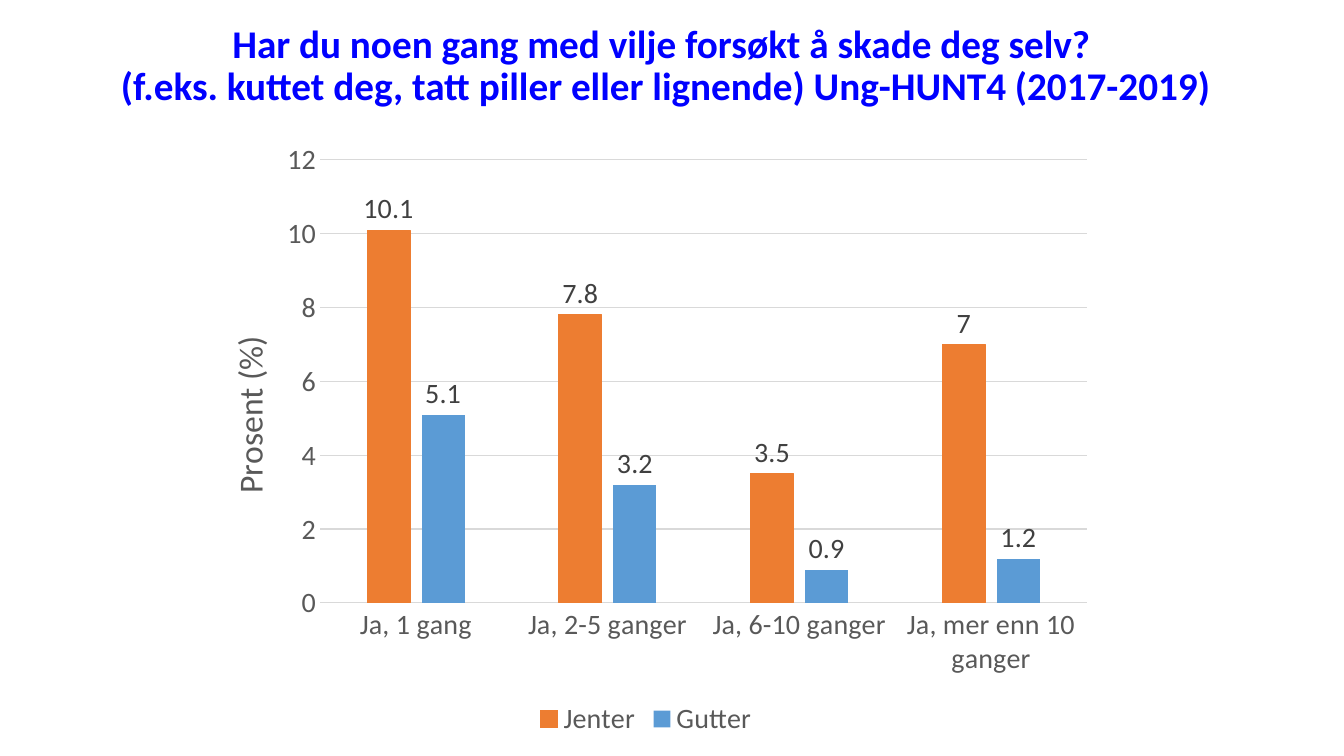
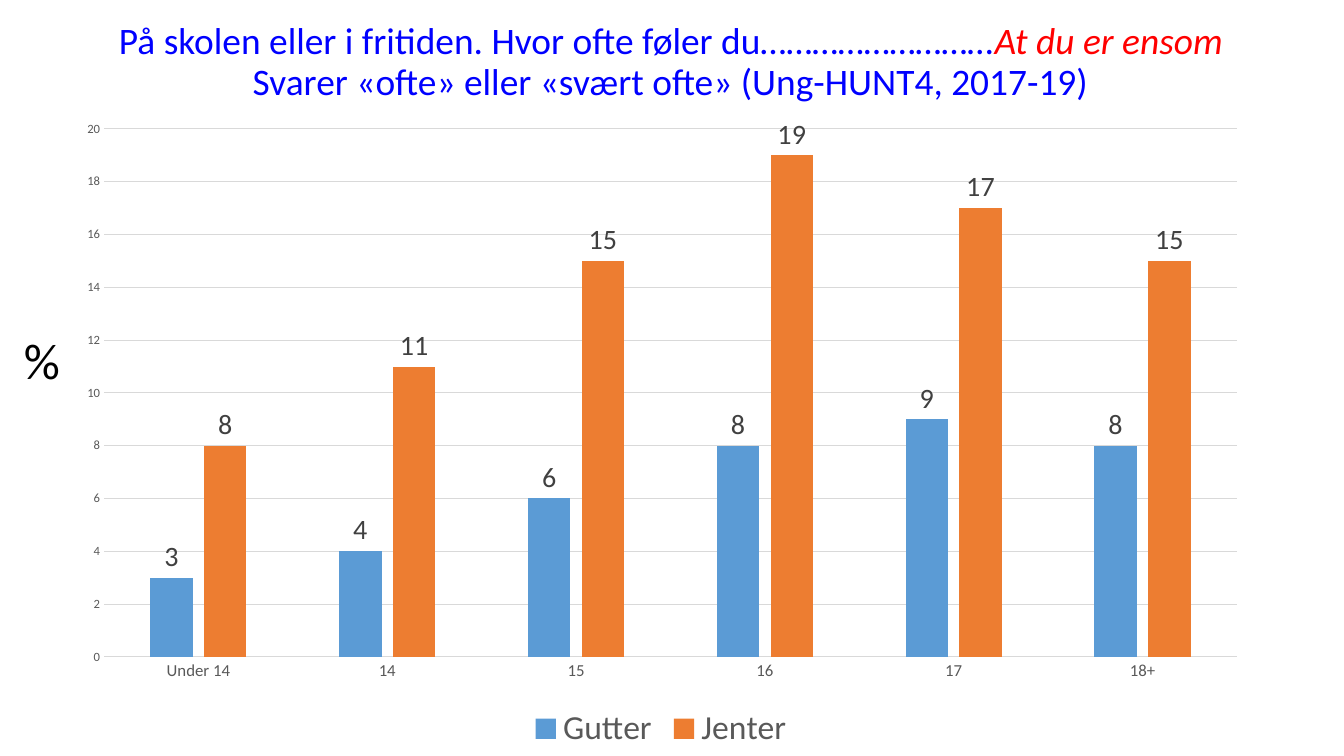
from dataclasses import dataclass

from lxml.etree import SubElement
from pptx import Presentation
from pptx.chart.data import CategoryChartData
from pptx.dml.color import RGBColor
from pptx.enum.chart import XL_CHART_TYPE, XL_LABEL_POSITION, XL_LEGEND_POSITION, XL_TICK_MARK
from pptx.enum.text import MSO_ANCHOR, MSO_AUTO_SIZE, PP_ALIGN
from pptx.oxml.ns import qn
from pptx.util import Pt

SCALE = 12192000 / 1344


@dataclass(frozen=True)
class Theme:
    font: str = "Calibri"
    title: str = "0000FF"
    accent: str = "FF0000"
    text: str = "000000"
    axis: str = "595959"
    label: str = "404040"
    grid: str = "D9D9D9"
    girls: str = "ED7D31"
    boys: str = "5B9BD5"
    label_size: int = 20
    axis_title_size: int = 24
    unit_size: int = 36


THEME = Theme()
SERIES_COLORS = {"Jenter": THEME.girls, "Gutter": THEME.boys}


def px(value):
    return round(value * SCALE)


def apply(target, **formats):
    for name, value in formats.items():
        setattr(target, name, value)


def style_font(font, size, color, bold=False, italic=False):
    apply(font, name=THEME.font, size=Pt(size), bold=bold, italic=italic)
    font.color.rgb = RGBColor.from_string(color)


def style_line(line, color):
    line.color.rgb = RGBColor.from_string(color)
    line.width = Pt(0.75)


def place(shape, box):
    apply(shape, **dict(zip(("left", "top", "width", "height"), map(px, box))))


def add_title(page, box, size, lines, bold=False):
    title = page.shapes.title
    place(title, box)
    frame = title.text_frame
    apply(frame, word_wrap=True, auto_size=MSO_AUTO_SIZE.NONE, vertical_anchor=MSO_ANCHOR.MIDDLE)
    para = frame.paragraphs[0]
    apply(para, alignment=PP_ALIGN.CENTER, line_spacing=0.9)
    for index, line in enumerate(lines):
        if index:
            para.add_line_break()
        for text, color, italic in line:
            span = para.add_run()
            span.text = text
            style_font(span.font, size, color, bold, italic)


def add_layout(parent, chart_box, box, inner=False):
    left, top, width, height = chart_box
    layout = parent.get_or_add_layout() if hasattr(parent, "get_or_add_layout") else parent.find(qn("c:layout"))
    if layout is None:
        layout = SubElement(parent, qn("c:layout"))
        parent.remove(layout)
        parent.insert(0, layout)
    for child in list(layout):
        layout.remove(child)
    manual = SubElement(layout, qn("c:manualLayout"))
    settings = [("layoutTarget", "inner")] if inner else []
    settings += [("xMode", "edge"), ("yMode", "edge")]
    fractions = ((box[0] - left) / width, (box[1] - top) / height)
    fractions += tuple(part / whole for part, whole in zip(box[2:], (width, height)))
    settings += [(key, f"{value:.4f}") for key, value in zip("xywh", fractions)]
    for key, value in settings:
        SubElement(manual, qn(f"c:{key}")).set("val", value)


def style_axes(chart, maximum, category_size, value_size):
    category, value = chart.category_axis, chart.value_axis
    for axis, size in ((category, category_size), (value, value_size)):
        apply(axis, major_tick_mark=XL_TICK_MARK.NONE, minor_tick_mark=XL_TICK_MARK.NONE)
        style_font(axis.tick_labels.font, size, THEME.axis)
    style_line(category.format.line, THEME.grid)
    apply(value, minimum_scale=0, maximum_scale=maximum, major_unit=2, has_major_gridlines=True)
    value.format.line.fill.background()
    style_line(value.major_gridlines.format.line, THEME.grid)


def style_series(plot, number_format):
    for series in plot.series:
        color = SERIES_COLORS[series.name]
        series.format.fill.solid()
        series.format.fill.fore_color.rgb = RGBColor.from_string(color)
        series.invert_if_negative = False
        labels = series.data_labels
        apply(labels, show_value=True, position=XL_LABEL_POSITION.OUTSIDE_END,
              number_format=number_format, number_format_is_linked=False)
        style_font(labels.font, THEME.label_size, THEME.label)


def add_columns(page, box, plot_box, categories, values, maximum, sizes, number_format="General"):
    data = CategoryChartData()
    data.categories = categories
    for name, numbers in values.items():
        data.add_series(name, numbers)
    frame = page.shapes.add_chart(XL_CHART_TYPE.COLUMN_CLUSTERED, *map(px, box), data)
    chart = frame.chart
    style_font(chart.font, 10, THEME.text)
    apply(chart, has_title=False, has_legend=True)
    apply(chart.legend, position=XL_LEGEND_POSITION.BOTTOM, include_in_layout=False)
    style_font(chart.legend.font, sizes["legend"], THEME.axis)
    plot = chart.plots[0]
    apply(plot, gap_width=219, overlap=-27, vary_by_categories=False)
    style_axes(chart, maximum, sizes["category"], sizes["value"])
    style_series(plot, number_format)
    add_layout(chart._chartSpace.chart.plotArea, box, plot_box, inner=True)
    return chart


def add_axis_title(chart, chart_box, corner, text):
    title = chart.value_axis.axis_title
    para = title.text_frame.paragraphs[0]
    span = para.add_run()
    span.text = text
    style_font(span.font, THEME.axis_title_size, THEME.axis)
    add_layout(title._element, chart_box, corner)


def add_unit(page, box, text):
    unit = page.shapes.add_textbox(*map(px, box))
    frame = unit.text_frame
    apply(frame, word_wrap=False, auto_size=MSO_AUTO_SIZE.SHAPE_TO_FIT_TEXT)
    span = frame.paragraphs[0].add_run()
    span.text = text
    style_font(span.font, THEME.unit_size, THEME.text)


def build_self_harm(page):
    box = (188, 131, 916, 611)
    chart = add_columns(
        page, box, (320, 160, 767, 443),
        ("Ja, 1 gang", "Ja, 2-5 ganger", "Ja, 6-10 ganger", "Ja, mer enn 10 ganger"),
        {"Jenter": (10.1, 7.8, 3.5, 7), "Gutter": (5.1, 3.2, 0.9, 1.2)},
        12, {"category": 20, "value": 20, "legend": 20})
    style_line(chart.plots[0].series[0].format.line, THEME.girls)
    add_axis_title(chart, box, (221, 330), "Prosent (%)")
    add_title(page, (86, -6, 1159, 146), 28, (
        [("Har du noen gang med vilje forsøkt å skade deg selv? ", THEME.title, False)],
        [("(f.eks. kuttet deg, tatt piller eller lignende) Ung-HUNT4 (2017-2019)", THEME.title, False)],
    ), bold=True)


def build_loneliness(page):
    add_title(page, (62, 0, 1218, 126), 26.7, (
        [("På skolen eller i fritiden. Hvor ofte føler du………………………", THEME.title, False),
         ("At du er ensom", THEME.accent, True)],
        [("Svarer «ofte» eller «svært ofte» (Ung-HUNT4, 2017-19)", THEME.title, False)],
    ))
    add_columns(
        page, (62, 110, 1198, 646), (104, 129, 1133, 528),
        ("Under 14", "14", "15", "16", "17", "18+"),
        {"Gutter": (3, 4, 6, 8, 9, 8), "Jenter": (8, 11, 15, 19, 17, 15)},
        20, {"category": 12, "value": 9, "legend": 24}, "#,##0")
    add_unit(page, (14, 324, 56, 72), "%")


def main():
    deck = Presentation()
    apply(deck, slide_width=px(1344), slide_height=px(756))
    for build in (build_self_harm, build_loneliness):
        build(deck.slides.add_slide(deck.slide_layouts[5]))
    deck.save("out.pptx")


if __name__ == "__main__":
    main()
